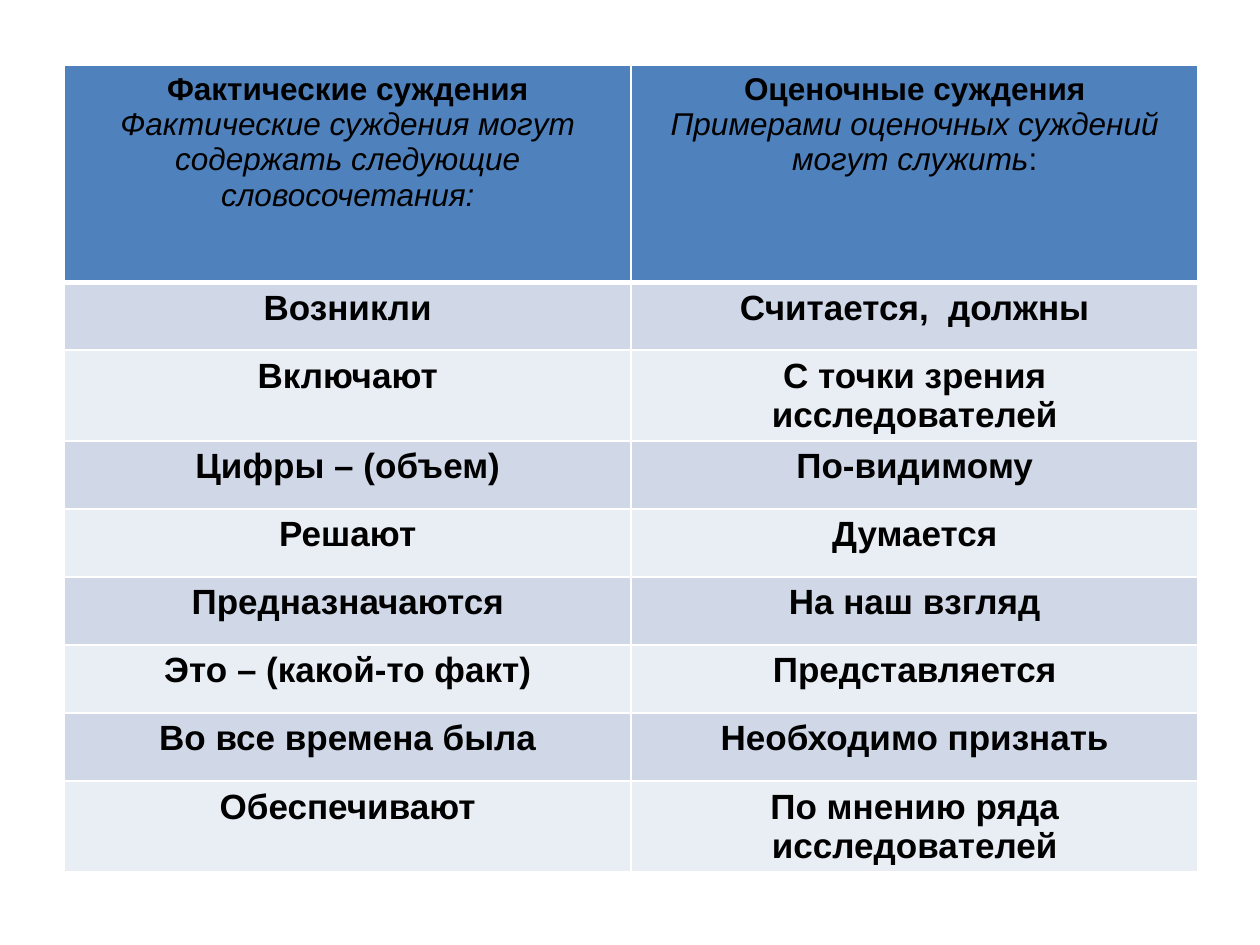
from lxml import etree
from pptx import Presentation
from pptx.dml.color import RGBColor
from pptx.enum.text import PP_ALIGN
from pptx.oxml.ns import qn
from pptx.util import Inches, Pt

CENTER = PP_ALIGN.CENTER
FONT, INK, RULE = "Arial", "000000", "FFFFFF"
HEAD, BANDS = "4F81BD", ("D0D8E8", "E9EDF4")
HEAD_TALL, ROW_TALL, PAD = 1.72, 0.54, 0.05

# Each heading is a title and the runs below it: (text, italic)
HEADS = [
    ("Фактические суждения",
     [("Фактические суждения могут содержать следующие словосочетания:", True)]),
    ("Оценочные суждения",
     [("Примерами оценочных суждений могут служить", True), (":", False)]),
]
ROWS = [
    ("Возникли", "Считается,  должны"),
    ("Включают", "С точки зрения исследователей"),
    ("Цифры – (объем)", "По-видимому"),
    ("Решают", "Думается"),
    ("Предназначаются", "На наш взгляд"),
    ("Это – (какой-то факт)", "Представляется"),
    ("Во все времена была", "Необходимо признать"),
    ("Обеспечивают", "По мнению ряда исследователей"),
]


def color(code):
    return RGBColor.from_string(code)


def add_run(para, text, size, bold=False, italic=False):
    run = para.add_run()
    run.text = text
    font = run.font
    font.name, font.size = FONT, Pt(size)
    font.bold, font.italic = bold, italic
    font.color.rgb = color(INK)


def add_rules(cell, base):
    """Draw the four cell borders; base is the bottom width in points."""
    props = cell._tc.get_or_add_tcPr()
    for side, width in (("L", 1), ("R", 1), ("T", 1), ("B", base)):
        line = etree.SubElement(props, qn(f"a:ln{side}"), w=str(Pt(width)))
        fill = etree.SubElement(line, qn("a:solidFill"))
        etree.SubElement(fill, qn("a:srgbClr"), val=RULE)


def style_cell(cell, fill, base=1):
    """Dress the cell and return its centred paragraph."""
    add_rules(cell, base)
    cell.fill.solid()
    cell.fill.fore_color.rgb = color(fill)
    cell.margin_left = cell.margin_right = Inches(PAD)
    cell.margin_top = cell.margin_bottom = Inches(PAD)
    para = cell.text_frame.paragraphs[0]
    para.alignment = CENTER
    return para


def add_grid(slide, left, top, width):
    tall = HEAD_TALL + ROW_TALL * len(ROWS)
    frame = slide.shapes.add_table(
        len(ROWS) + 1, len(HEADS),
        Inches(left), Inches(top), Inches(width), Inches(tall))
    table = frame.table
    for col in table.columns:
        col.width = Inches(width / len(HEADS))
    for num, row in enumerate(table.rows):
        row.height = Inches(ROW_TALL if num else HEAD_TALL)

    for col, (title, notes) in enumerate(HEADS):
        para = style_cell(table.cell(0, col), HEAD, base=3)
        add_run(para, title, 18, bold=True)
        para.add_line_break()
        for text, italic in notes:
            add_run(para, text, 18, italic=italic)

    for num, words in enumerate(ROWS):
        for col, text in enumerate(words):
            para = style_cell(table.cell(num + 1, col), BANDS[num % 2])
            add_run(para, text, 20, bold=True)


def main():
    deck = Presentation()
    deck.slide_width, deck.slide_height = Inches(10), Inches(7.5)
    slide = deck.slides.add_slide(deck.slide_layouts[6])
    add_grid(slide, 0.51, 0.52, 9)
    deck.save("out.pptx")


if __name__ == "__main__":
    main()
